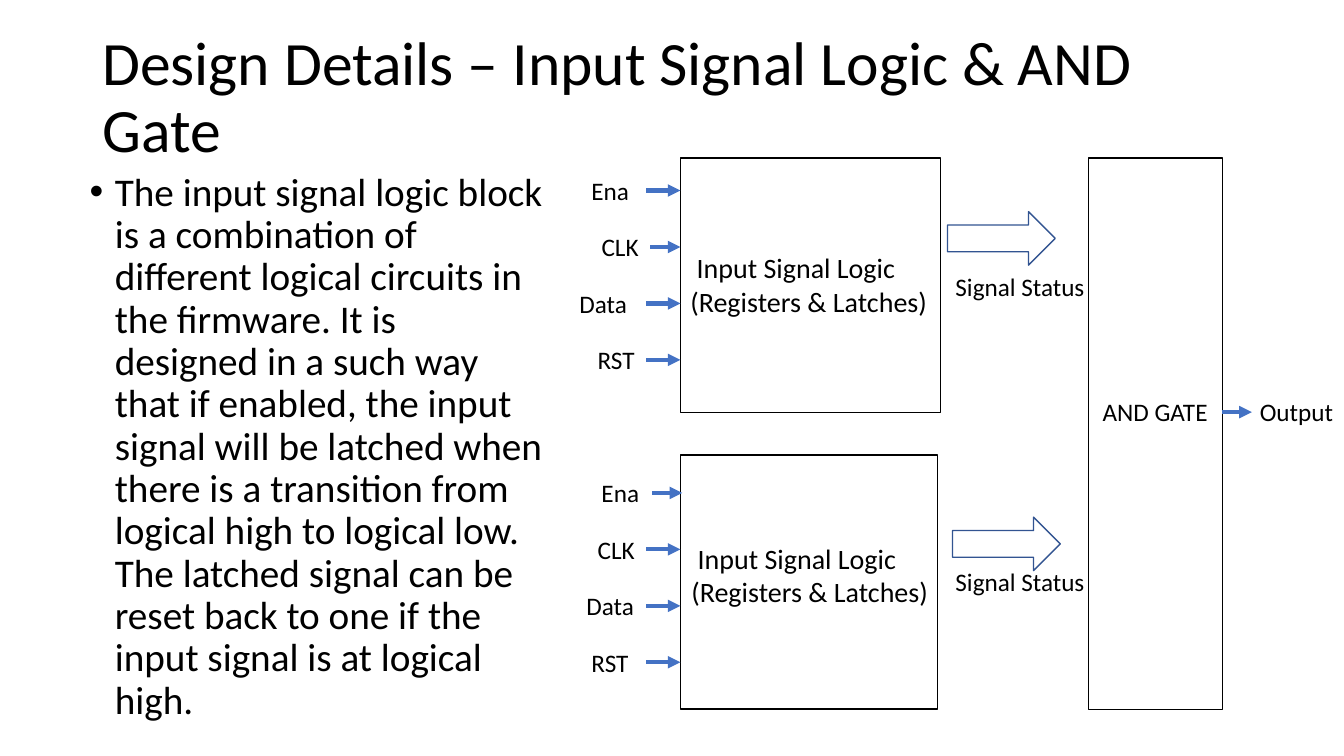
from pptx import Presentation
from pptx.util import Pt
from pptx.dml.color import RGBColor
from pptx.enum.shapes import MSO_SHAPE as Shape, MSO_CONNECTOR as Link
from pptx.enum.text import MSO_ANCHOR as Anchor, MSO_AUTO_SIZE as Auto
from lxml import etree

# Content
TITLE = "Design Details – Input Signal Logic & AND Gate"
BODY = (
    "The input signal logic block is a combination of different logical "
    "circuits in the firmware. It is designed in a such way that if enabled, "
    "the input signal will be latched when there is a transition from logical "
    "high to logical low. The latched signal can be reset back to one if the "
    "input signal is at logical high."
)
LOGIC = [" Input Signal Logic", "(Registers & Latches)"]
STATUS = "Signal Status"

# Each block: box, caption, wide arrow, status place, then pins as
# (name, label left, label right, arrow tip)
BLOCKS = [
    dict(box=(486, 113, 186, 181.5), cap=(486, 175.7, 193.7, 55.4),
         arrow=(676.8, 151.2), status=(675.4, 190.1), top=121.7,
         pins=[("Ena", 415.4, 461.5, 486), ("CLK", 422.6, 464.4, 486),
               ("Data", 406.8, 461.5, 486), ("RST", 419.8, 461.5, 486)]),
    dict(box=(486, 325, 183.6, 181.5), cap=(486.7, 383, 195.1, 55.4),
         arrow=(680.4, 369.4), status=(675.4, 401), top=337.7,
         pins=[("Ena", 422.6, 465.8, 487.4), ("CLK", 419.8, 461.5, 486),
               ("Data", 411.8, 461.5, 486), ("RST", 415.4, 461.5, 486)]),
]
GATE = (777.6, 113, 95.8, 393.8)
PITCH, HIGH = 40.32, 28.8  # pin step and label height
BLACK, BLUE, NAVY = "000000", "4472C4", "325491"
NS = "http://schemas.openxmlformats.org/drawingml/2006/main"

deck = Presentation()
deck.slide_width, deck.slide_height = Pt(960), Pt(540)
slide = deck.slides.add_slide(deck.slide_layouts[6])
shapes = slide.shapes


def color(code):
    return RGBColor.from_string(code)


def sub(node, tag, **attrs):
    return etree.SubElement(node, f"{{{NS}}}{tag}", attrs)


def write(text, at, size=18, wrap=True, grow=True, anchor=Anchor.TOP,
          space=None, before=None, bullet=False):
    frame = shapes.add_textbox(*map(Pt, at)).text_frame
    frame.word_wrap = wrap
    frame.auto_size = Auto.SHAPE_TO_FIT_TEXT if grow else Auto.NONE
    frame.vertical_anchor = anchor
    lines = [text] if isinstance(text, str) else text
    for i, line in enumerate(lines):
        para = frame.add_paragraph() if i else frame.paragraphs[0]
        if space:
            para.line_spacing = space
        if before:
            para.space_before = Pt(before)
        if bullet:
            props = para._p.get_or_add_pPr()
            props.set("marL", str(Pt(18)))
            props.set("indent", str(-Pt(18)))
            sub(props, "buFont", typeface="Arial")
            sub(props, "buChar", char="•")
        run = para.add_run()
        run.text = line
        run.font.size = Pt(size)
        run.font.name = "Calibri"
        run.font.color.rgb = color(BLACK)


def draw(kind, at, line):
    item = shapes.add_shape(kind, *map(Pt, at))
    item.shadow.inherit = False
    item.fill.background()
    item.line.color.rgb = color(line)
    item.line.width = Pt(1)


def wire(start, end, y):
    item = shapes.add_connector(Link.STRAIGHT, Pt(start), Pt(y), Pt(end), Pt(y))
    item.line.color.rgb = color(BLUE)
    item.line.width = Pt(3)
    sub(item.line._get_or_add_ln(), "tailEnd", type="triangle")
    sub(item._element.spPr, "effectLst")


# Title and body
write(TITLE, (66, 28.8, 844, 84), size=44, grow=False,
      anchor=Anchor.MIDDLE, space=0.9)
write(BODY, (57, 119.5, 338.4, 405.4), size=28, grow=False,
      space=0.9, before=10, bullet=True)

# Signal blocks
for block in BLOCKS:
    draw(Shape.RECTANGLE, block["box"], BLACK)
    for i, (name, left, right, tip) in enumerate(block["pins"]):
        top = block["top"] + i * PITCH
        write(name, (left, top, right - left, HIGH))
        wire(right, tip, top + HIGH / 2)
    write(LOGIC, block["cap"], size=20)
    write(STATUS, (*block["status"], 108, HIGH), wrap=False)
    draw(Shape.RIGHT_ARROW, (*block["arrow"], 77, 38.2), NAVY)

# Gate and output
draw(Shape.RECTANGLE, GATE, BLACK)
write("AND GATE", (780.5, 279.6, 90.7, HIGH), wrap=False)
write("Output", (892.8, 279.6, 67.7, HIGH), wrap=False)
wire(872.6, 894.2, 294.4)

deck.save("out.pptx")
